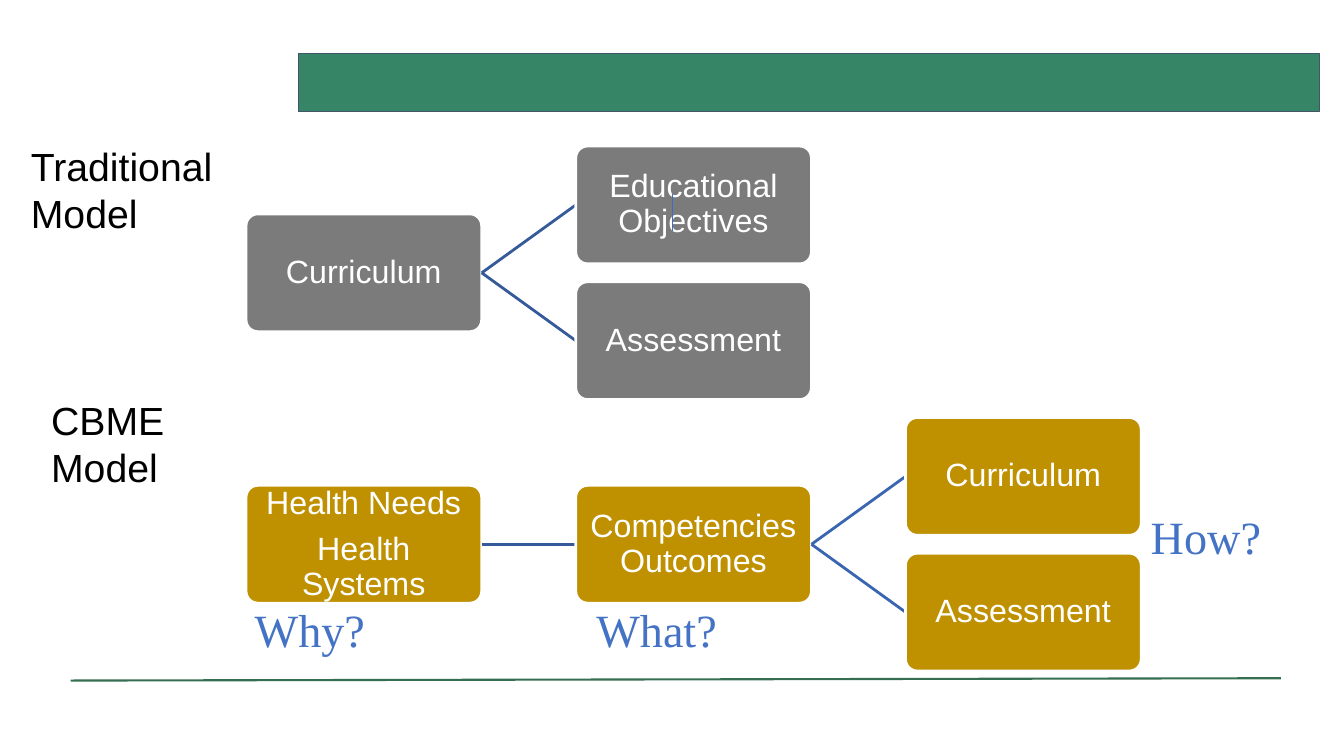
from lxml import etree
from pptx import Presentation
from pptx.dml.color import RGBColor
from pptx.enum.shapes import MSO_CONNECTOR, MSO_SHAPE
from pptx.enum.text import MSO_ANCHOR, PP_ALIGN
from pptx.oxml.ns import qn
from pptx.util import Cm, Pt

STRAIGHT = MSO_CONNECTOR.STRAIGHT
RECTANGLE = MSO_SHAPE.RECTANGLE
ROUNDED = MSO_SHAPE.ROUNDED_RECTANGLE
MIDDLE = MSO_ANCHOR.MIDDLE
CENTER = PP_ALIGN.CENTER
LEFT_SITE, RIGHT_SITE = 1, 3

COLORS = {
    "banner": "358566", "banner edge": "44546A", "footer rule": "366E51",
    "traditional": "7B7B7B", "cbme": "BF9000", "white": "FFFFFF",
    "black": "000000", "question": "4472C4", "branch": "345A99",
    "deep branch": "3A66B1", "tick": "3E6EC2",
}


class ModelSlide:
    box_width, box_height = 5.94, 2.97
    first_column, column_step = 6.2, 8.31
    first_row, row_step = 3.68, 1.71
    body_font, question_font = "Arial", "Times New Roman"

    def __init__(self, slide):
        self.shapes = slide.shapes

    def color(self, name):
        return RGBColor.from_string(COLORS[name])

    def outline(self, line, color, points):
        line.color.rgb = self.color(color)
        line.width = Pt(points)

    def style_text(self, paragraph, size, color, font):
        paragraph.font.size = Pt(size)
        paragraph.font.name = font
        paragraph.font.color.rgb = self.color(color)

    def panel(self, kind, left, top, width, height, fill, edge, points):
        panel = self.shapes.add_shape(kind, Cm(left), Cm(top), Cm(width), Cm(height))
        panel.shadow.inherit = False
        panel.fill.solid()
        panel.fill.fore_color.rgb = self.color(fill)
        self.outline(panel.line, edge, points)
        return panel

    def rule(self, x1, y1, x2, y2, color, points):
        rule = self.shapes.add_connector(STRAIGHT, Cm(x1), Cm(y1), Cm(x2), Cm(y2))
        self.outline(rule.line, color, points)
        etree.SubElement(rule.element.spPr, qn("a:effectLst"))
        return rule

    def node(self, column, row, text, fill):
        node = self.panel(
            ROUNDED,
            self.first_column + column * self.column_step,
            self.first_row + row * self.row_step,
            self.box_width, self.box_height, fill, "white", 2)
        node.adjustments[0] = 0.1
        frame = node.text_frame
        frame.word_wrap = True
        frame.vertical_anchor = MIDDLE
        frame.margin_left = frame.margin_right = Cm(0.13)
        frame.margin_top = frame.margin_bottom = Cm(0.13)
        frame.text = text
        for position, paragraph in enumerate(frame.paragraphs):
            paragraph.alignment = CENTER
            paragraph.line_spacing = 0.9
            if position:
                paragraph.space_before = Pt(8.1)
            self.style_text(paragraph, 23, "white", self.body_font)
        return node

    def child(self, parent, column, row, text, fill, link_color):
        link = self.rule(0, 0, 1, 1, link_color, 2)
        link.begin_connect(parent, RIGHT_SITE)
        node = self.node(column, row, text, fill)
        link.end_connect(node, LEFT_SITE)
        return node

    def label(self, left, top, width, height, text, size, color, font, spacing):
        label = self.shapes.add_textbox(Cm(left), Cm(top), Cm(width), Cm(height))
        label.text_frame.word_wrap = True
        label.text_frame.text = text
        paragraph = label.text_frame.paragraphs[0]
        paragraph.line_spacing = spacing
        self.style_text(paragraph, size, color, font)

    def heading(self, left, top, width, text):
        self.label(left, top, width, 2.64, text, 28, "black", self.body_font, 1.0)

    def question(self, left, top, text):
        self.label(left, top, 5.87, 1.55, text, 33, "question", self.question_font, 0.9)


def main():
    deck = Presentation()
    deck.slide_width, deck.slide_height = Cm(33.87), Cm(19.05)
    page = ModelSlide(deck.slides.add_slide(deck.slide_layouts[6]))

    page.panel(RECTANGLE, 7.52, 1.35, 25.73, 1.47, "banner", "banner edge", 0.75)
    page.rule(1.78, 17.15, 32.28, 17.09, "footer rule", 1.5)

    curriculum = page.node(0, 1, "Curriculum", "traditional")
    for row, text in ((0, "Educational Objectives"), (2, "Assessment")):
        page.child(curriculum, 1, row, text, "traditional", "branch")

    needs = page.node(0, 5, "Health Needs\nHealth Systems", "cbme")
    outcomes = page.child(needs, 1, 5, "Competencies Outcomes", "cbme", "branch")
    for row, text in ((4, "Curriculum"), (6, "Assessment")):
        page.child(outcomes, 2, row, text, "cbme", "deep branch")

    page.heading(0.53, 3.45, 7.7, "Traditional Model")
    page.heading(1.04, 9.86, 5.46, "CBME Model")
    page.rule(16.94, 4.9, 16.94, 5.82, "tick", 0.75)

    page.question(6.17, 15.19, "Why?")
    page.question(14.78, 15.19, "What?")
    page.question(28.75, 12.83, "How?")

    deck.save("out.pptx")


if __name__ == "__main__":
    main()
